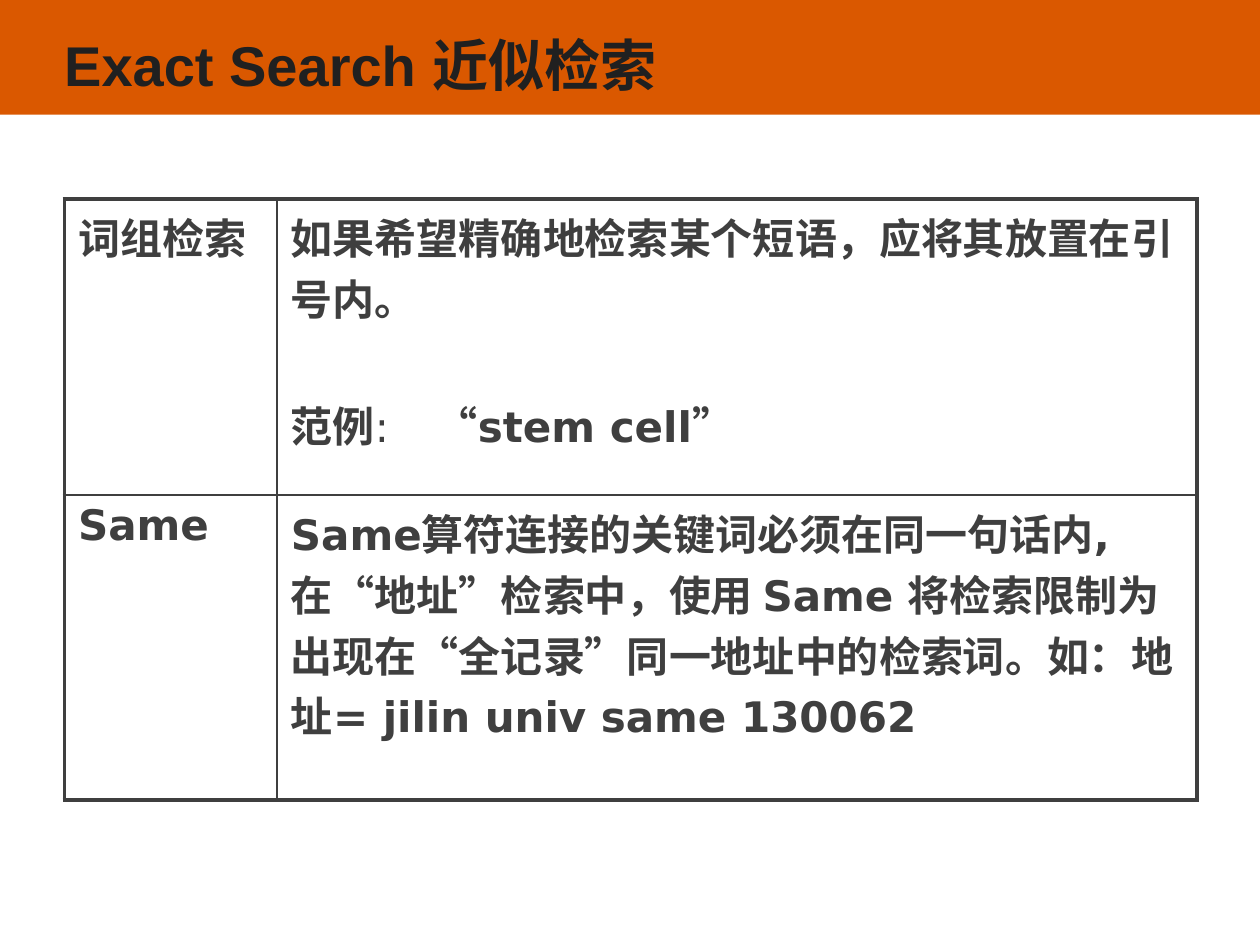
"""Build a slide with a banner title and a two-row table of search operators."""
from lxml import etree
from pptx import Presentation, util as u
from pptx.dml.color import RGBColor
from pptx.enum import lang, shapes, text
from pptx.oxml import ns

ORANGE = RGBColor(0xDA, 0x58, 0x00)
BLACK = RGBColor(0x20, 0x20, 0x20)
GREY = RGBColor(0x3F, 0x3F, 0x3F)
WIDTH, HEIGHT = 10, 7.5
LEFT, INNER = 0.51, 8.99
COLUMNS = [1.69, 7.3]
ROWS = [2.35, 2.42]
THICK, THIN = 2.25, 1
TITLE = "Exact Search 近似检索"
CELLS = [
    [
        [[("词组检索", True)]],
        [
            [("如果希望精确地检索某个短语，应将其放置在引号内。", True)],
            [("范例", True), (":\t", False), ("“stem cell”", True)],
        ],
    ],
    [
        [[("Same", True)]],
        [[("Same算符连接的关键词必须在同一句话内, 在“地址”检索中，使用 Same "
           "将检索限制为出现在“全记录”同一地址中的检索词。如：地址= jilin univ same 130062", True)]],
    ],
]


def add_span(para, words, *, font, size, color, bold=True):
    """Append a formatted run to a paragraph."""
    span = para.add_run()
    span.text = words
    span.font.name = font
    span.font.size = u.Pt(size)
    span.font.bold = bold
    span.font.color.rgb = color
    span.font.language_id = lang.MSO_LANGUAGE_ID.SIMPLIFIED_CHINESE


def add_banner(page):
    """Draw the coloured band behind the title."""
    banner = page.shapes.add_shape(
        shapes.MSO_SHAPE.RECTANGLE, 0, 0, u.Inches(WIDTH), u.Inches(0.91))
    banner.shadow.inherit = False
    banner.fill.solid()
    banner.fill.fore_color.rgb = ORANGE
    banner.line.fill.background()
    page.shapes._spTree.insert(2, banner._element)


def set_title(page, words):
    """Place and format the title placeholder."""
    title = page.shapes.title
    title.left, title.top = u.Inches(LEFT), u.Inches(0.12)
    title.width, title.height = u.Inches(INNER), u.Inches(0.78)
    frame = title.text_frame
    frame.margin_left = frame.margin_right = frame.margin_top = frame.margin_bottom = 0
    frame.vertical_anchor = text.MSO_ANCHOR.MIDDLE
    frame.word_wrap = True
    para = frame.paragraphs[0]
    para.alignment = text.PP_ALIGN.LEFT
    add_span(para, words, font="Arial", size=32, color=BLACK)


def add_tab(para, inches):
    """Add a left tab stop to a paragraph."""
    stops = etree.SubElement(para._p.get_or_add_pPr(), ns.qn("a:tabLst"))
    etree.SubElement(stops, ns.qn("a:tab"), pos=str(u.Inches(inches)), algn="l")


def set_borders(cell, **widths):
    """Give the cell sides solid lines of the given point widths."""
    properties = cell._tc.get_or_add_tcPr()
    for place, (side, points) in enumerate(widths.items()):
        line = etree.Element(ns.qn(f"a:ln{side}"), w=str(u.Pt(points)))
        fill = etree.SubElement(line, ns.qn("a:solidFill"))
        etree.SubElement(fill, ns.qn("a:srgbClr"), val=str(GREY))
        properties.insert(place, line)


def fill_cell(cell, paragraphs):
    """Write the paragraphs of one cell."""
    cell.fill.background()
    cell.margin_left = cell.margin_right = u.Inches(0.11)
    cell.margin_top = cell.margin_bottom = u.Inches(0.05)
    frame = cell.text_frame
    for index, spans in enumerate(paragraphs):
        para = frame.add_paragraph() if index else frame.paragraphs[0]
        if index:
            para.space_before = u.Pt(38)
            add_tab(para, 1.15)
        for words, bold in spans:
            add_span(para, words, font="DejaVu Sans", size=24, color=GREY, bold=bold)


def add_operator_table(page):
    """Add the framed table of search operators."""
    table = page.shapes.add_table(
        len(ROWS), len(COLUMNS), u.Inches(LEFT), u.Inches(1.58),
        u.Inches(sum(COLUMNS)), u.Inches(sum(ROWS))).table
    table.first_row = table.horz_banding = False
    for column, width in zip(table.columns, COLUMNS):
        column.width = u.Inches(width)
    last_row, last_column = len(ROWS) - 1, len(COLUMNS) - 1
    for r, height in enumerate(ROWS):
        table.rows[r].height = u.Inches(height)
        for c, paragraphs in enumerate(CELLS[r]):
            cell = table.cell(r, c)
            fill_cell(cell, paragraphs)
            set_borders(
                cell,
                L=THIN if c else THICK,
                R=THICK if c == last_column else THIN,
                T=THIN if r else THICK,
                B=THICK if r == last_row else THIN)


def main():
    """Assemble and save the deck."""
    deck = Presentation()
    deck.slide_width, deck.slide_height = u.Inches(WIDTH), u.Inches(HEIGHT)
    page = deck.slides.add_slide(deck.slide_layouts[5])
    add_banner(page)
    set_title(page, TITLE)
    add_operator_table(page)
    deck.save("out.pptx")


if __name__ == "__main__":
    main()
